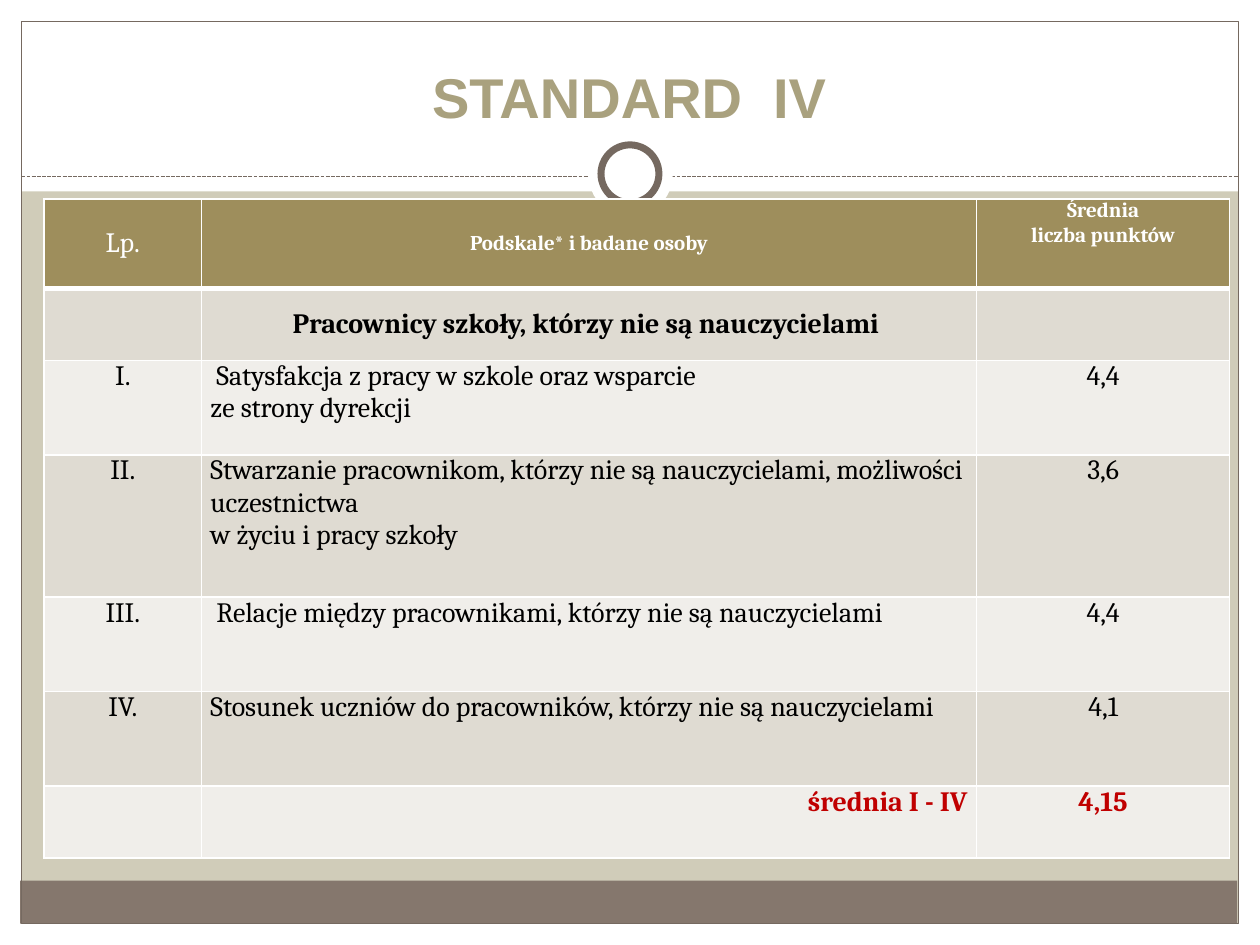
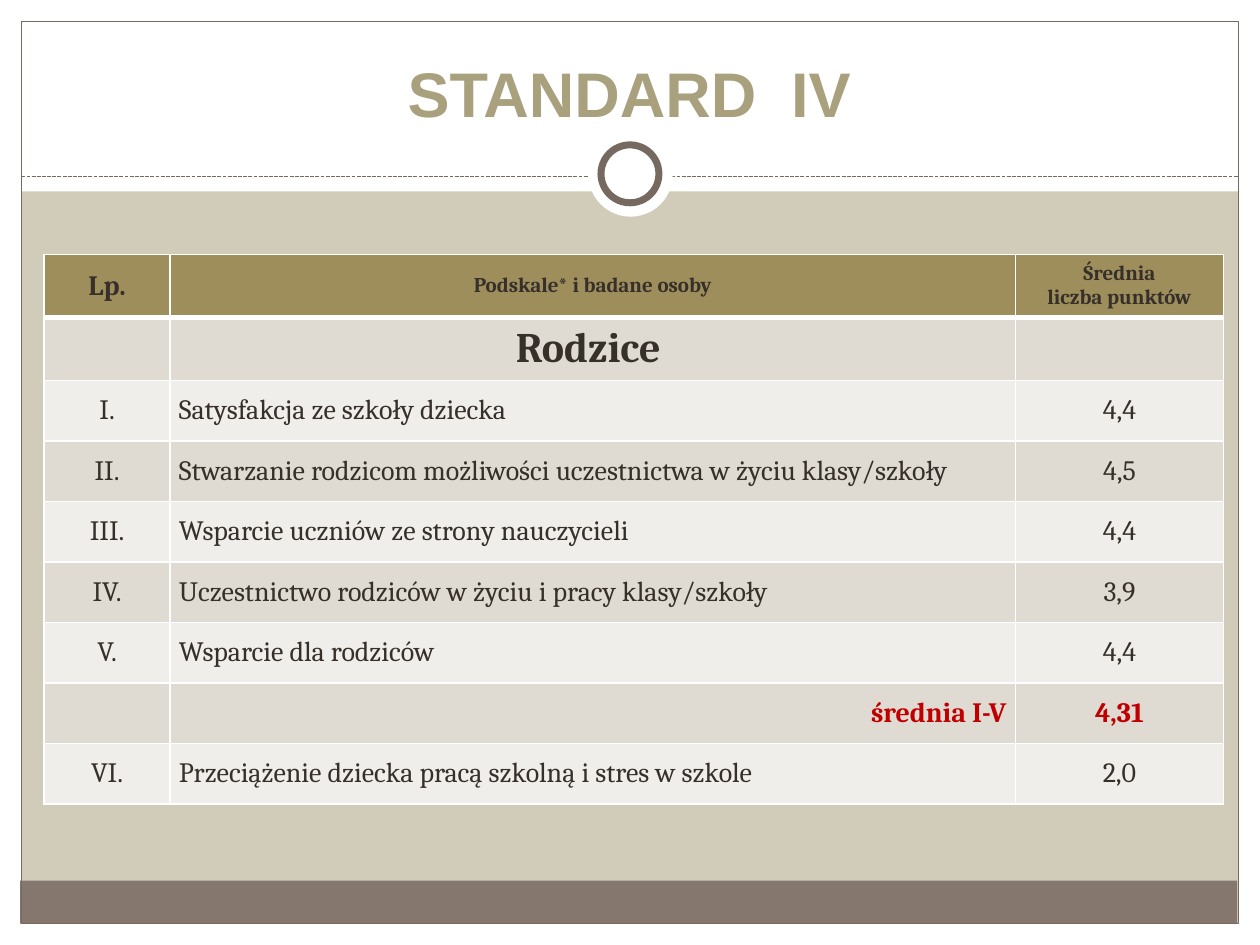
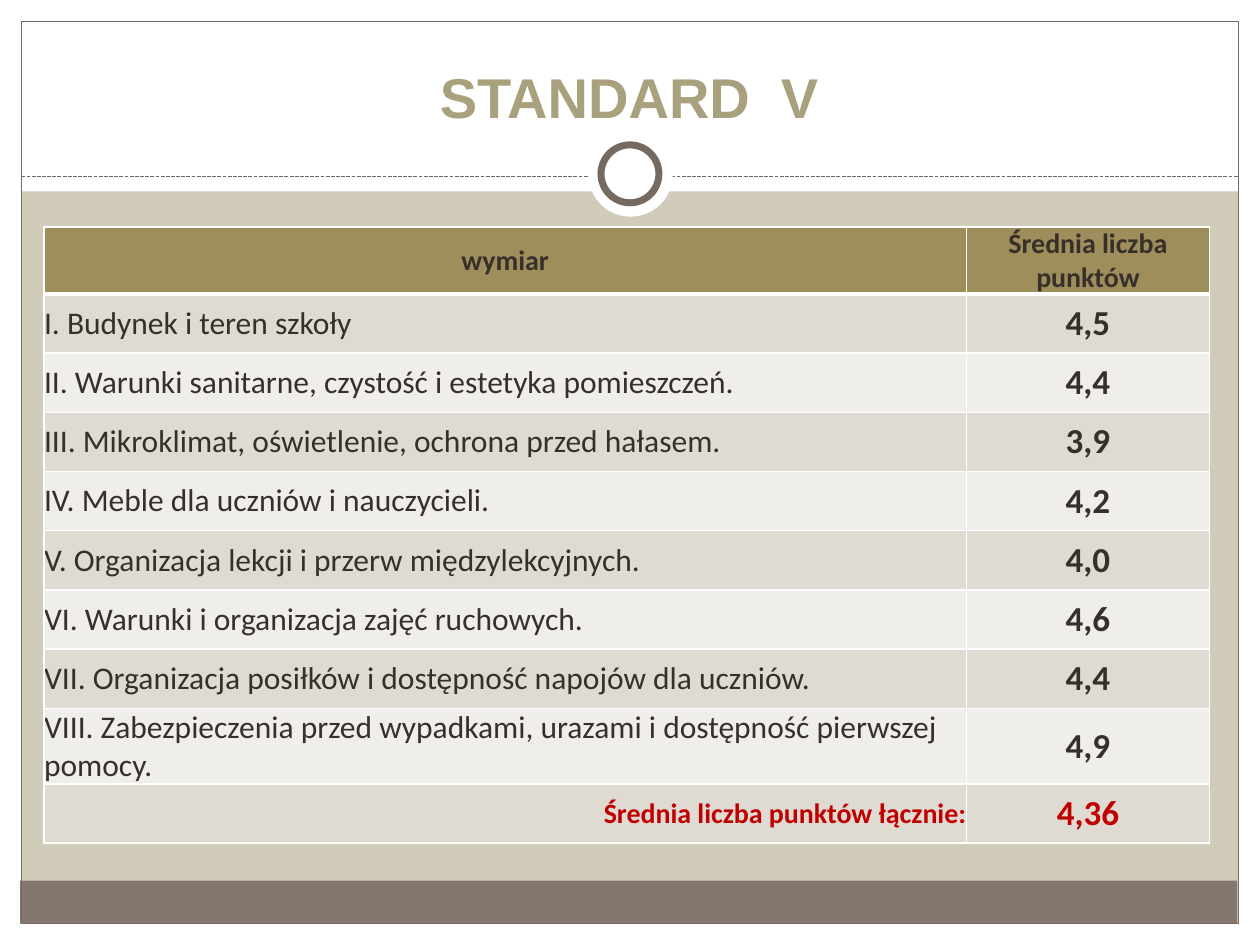
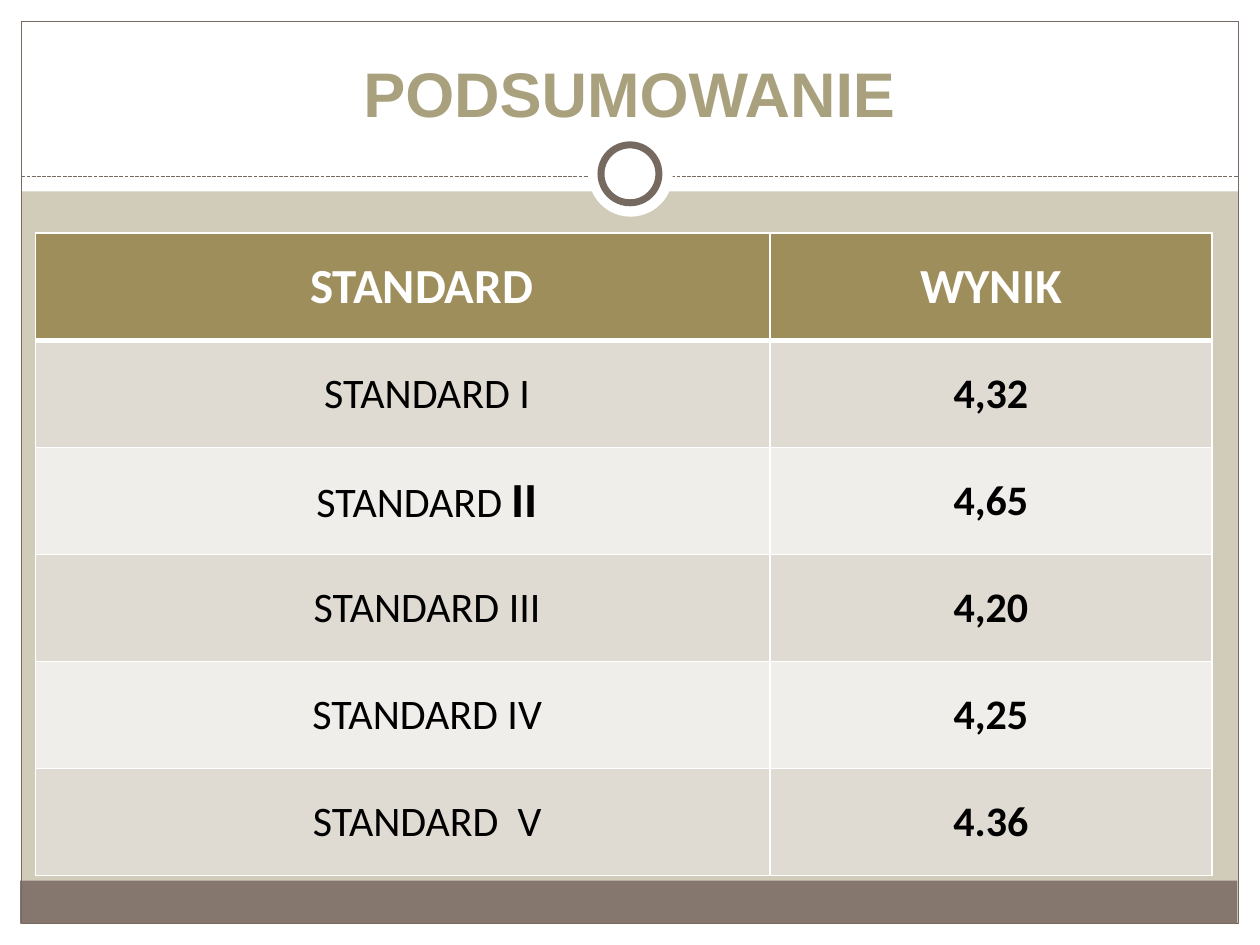
import dataclasses
import typing

import lxml.etree
import pptx
import pptx.dml.color
import pptx.enum.dml
import pptx.enum.shapes
import pptx.enum.text
import pptx.oxml.ns
import pptx.util

EMU_PER_PX = 9144  # 100 px to the inch

COLORS = {
    "background": "D0CCB9",
    "white": "FFFFFF",
    "black": "000000",
    "footer": "85776D",
    "frame": "756960",
    "title": "A9A17E",
    "title outline": "3B3026",
    "header": "9E8E5C",
    "dark band": "DFDBD2",
    "light band": "F0EEEA",
    "text": "37302A",
    "red": "C00000",
}

ALIGN = pptx.enum.text.PP_ALIGN
ANCHOR = pptx.enum.text.MSO_ANCHOR
SHAPE = pptx.enum.shapes.MSO_SHAPE


@dataclasses.dataclass(frozen=True)
class Decoration:
    left: int
    top: int
    width: int
    height: int
    fill: str = ""
    line: str = ""
    line_width: float = 0
    preset: SHAPE = SHAPE.RECTANGLE


@dataclasses.dataclass(frozen=True)
class CellStyle:
    size: int
    color: str = "text"
    bold: bool = False
    align: ALIGN = ALIGN.CENTER
    anchor: ANCHOR = ANCHOR.MIDDLE
    indent: int = 0


@dataclasses.dataclass(frozen=True)
class Cell:
    """Cell text: \\n starts a paragraph, \\v breaks a line."""
    text: str
    style: CellStyle
    large_ending: str = ""


EMPTY = Cell("", CellStyle(16))


@dataclasses.dataclass(frozen=True)
class ScoreTable:
    left: int
    top: int
    columns: list[int]
    row_heights: list[int]
    font: str
    margins: tuple[int, int]  # horizontal, vertical
    rows: list[list[Cell]]


@dataclasses.dataclass(frozen=True)
class ScoreSlide:
    title: str
    title_size: int
    table: ScoreTable


FRAME = [
    Decoration(0, 733, 1000, 17, "white"),
    Decoration(0, 0, 1000, 152, "white"),
    Decoration(0, 0, 17, 750, "white"),
    Decoration(983, 0, 17, 750, "white"),
    Decoration(16, 699, 966, 34, "footer"),
    Decoration(17, 17, 966, 716, line="frame", line_width=0.75),
]
RING = [
    Decoration(467, 105, 67, 67, "white", preset=SHAPE.OVAL),
    Decoration(477, 115, 46, 46, "white", "frame", 4, SHAPE.OVAL),
]


def px(length: int) -> pptx.util.Emu:
    return pptx.util.Emu(length * EMU_PER_PX)


def rgb(name: str) -> pptx.dml.color.RGBColor:
    return pptx.dml.color.RGBColor.from_string(COLORS[name])


def line_element(tag: str, color: str, points: int) -> lxml.etree._Element:
    """Make a solid DrawingML line for a border or a text outline."""
    qn = pptx.oxml.ns.qn
    line = lxml.etree.Element(qn(tag), w=str(pptx.util.Pt(points)))
    fill = lxml.etree.SubElement(line, qn("a:solidFill"))
    lxml.etree.SubElement(fill, qn("a:srgbClr"), val=COLORS[color])
    return line


def set_font(font: typing.Any, name: str, size: int, color: str, bold: bool) -> None:
    font.name = name
    font.size = pptx.util.Pt(size)
    font.bold = bold
    font.color.rgb = rgb(color)


def draw_decoration(slide: typing.Any, item: Decoration) -> None:
    shape = slide.shapes.add_shape(
        item.preset, px(item.left), px(item.top), px(item.width), px(item.height))
    shape.shadow.inherit = False
    if item.fill:
        shape.fill.solid()
        shape.fill.fore_color.rgb = rgb(item.fill)
    else:
        shape.fill.background()
    if item.line:
        shape.line.color.rgb = rgb(item.line)
        shape.line.width = pptx.util.Pt(item.line_width)
    else:
        shape.line.fill.background()


def draw_divider(slide: typing.Any) -> None:
    divider = slide.shapes.add_connector(
        pptx.enum.shapes.MSO_CONNECTOR.STRAIGHT, px(17), px(140), px(983), px(140))
    divider.line.color.rgb = rgb("frame")
    divider.line.width = pptx.util.Pt(0.75)
    divider.line.dash_style = pptx.enum.dml.MSO_LINE.SQUARE_DOT
    lxml.etree.SubElement(divider._element.spPr, pptx.oxml.ns.qn("a:effectLst"))


def draw_title(slide: typing.Any, text: str, size: int) -> None:
    frame = slide.shapes.add_textbox(px(33), px(25), px(933), px(83)).text_frame
    frame.word_wrap = True
    frame.vertical_anchor = ANCHOR.BOTTOM
    paragraph = frame.paragraphs[0]
    paragraph.text = text
    paragraph.alignment = ALIGN.CENTER
    set_font(paragraph.font, "Arial", size, "title", True)
    paragraph.font._element.insert(0, line_element("a:ln", "title outline", 1))


def fill_cell(target: typing.Any, cell: Cell, font: str) -> None:
    style = cell.style
    target.vertical_anchor = style.anchor
    target.text_frame.text = cell.text
    for paragraph in target.text_frame.paragraphs:
        paragraph.alignment = style.align
        set_font(paragraph.font, font, style.size, style.color, style.bold)
        if style.indent:
            paragraph._p.get_or_add_pPr().set("marL", str(px(style.indent)))
    if cell.large_ending:
        run = target.text_frame.paragraphs[-1].add_run()
        run.text = cell.large_ending
        run.font.size = pptx.util.Pt(style.size + 4)
        run.font.bold = True


def draw_table(slide: typing.Any, content: ScoreTable) -> None:
    table = slide.shapes.add_table(
        len(content.rows), len(content.columns), px(content.left), px(content.top),
        px(sum(content.columns)), px(sum(content.row_heights))).table
    table.horz_banding = False
    for column, width in zip(table.columns, content.columns):
        column.width = px(width)
    for row, height in zip(table.rows, content.row_heights):
        row.height = px(height)

    horizontal, vertical = map(px, content.margins)
    for row_index, cells in enumerate(content.rows):
        is_header = row_index == 0
        band = "header" if is_header else "dark band" if row_index % 2 else "light band"
        for column_index, cell in enumerate(cells):
            target = table.cell(row_index, column_index)
            target.margin_left = target.margin_right = horizontal
            target.margin_top = target.margin_bottom = vertical
            # The header has a thick lower edge, shared with the row below
            borders = {"a:lnL": 1, "a:lnR": 1,
                       "a:lnT": 3 if row_index == 1 else 1,
                       "a:lnB": 3 if is_header else 1}
            for tag, points in borders.items():
                target._tc.get_or_add_tcPr().append(line_element(tag, "white", points))
            target.fill.solid()
            target.fill.fore_color.rgb = rgb(band)
            fill_cell(target, cell, content.font)


def row_builder(*styles: CellStyle) -> typing.Callable[..., list[Cell]]:
    """Return a function that pairs the texts of a row with column styles."""
    def build(*texts: str) -> list[Cell]:
        return [Cell(text, style) for text, style in zip(texts, styles)]
    return build


def staff_table() -> ScoreTable:
    number = CellStyle(16, "black", anchor=ANCHOR.TOP)
    name = dataclasses.replace(number, align=ALIGN.LEFT)
    total = dataclasses.replace(number, color="red", bold=True)
    heading = CellStyle(12, "white", True)
    item = row_builder(number, name, number)
    return ScoreTable(
        35, 158, [125, 615, 201], [71, 57, 75, 113, 75, 75, 57], "Cambria", (7, 0), [
            [Cell("Lp.", CellStyle(16, "white")),
             Cell("Podskale* i badane osoby", heading),
             Cell("Średnia\nliczba punktów",
                  dataclasses.replace(heading, anchor=ANCHOR.TOP))],
            [EMPTY, Cell("Pracownicy szkoły, którzy nie są nauczycielami ",
                         CellStyle(16, "black", True)), EMPTY],
            item("I.", " Satysfakcja z pracy w szkole oraz wsparcie \vze strony dyrekcji",
                 "4,4"),
            item("II.", "Stwarzanie pracownikom, którzy nie są nauczycielami, możliwości "
                 "uczestnictwa \vw życiu i pracy szkoły", "3,6"),
            item("III.", " Relacje między pracownikami, którzy nie są nauczycielami",
                 "4,4"),
            item("IV.", "Stosunek uczniów do pracowników, którzy nie są nauczycielami",
                 "4,1"),
            [EMPTY, Cell("średnia I - IV", dataclasses.replace(total, align=ALIGN.RIGHT)),
             Cell("4,15", total)],
        ])


def parent_table() -> ScoreTable:
    number = CellStyle(16)
    total = CellStyle(16, "red", True)
    heading = CellStyle(12, bold=True)
    item = row_builder(number, CellStyle(16, align=ALIGN.LEFT), number)
    return ScoreTable(
        35, 202, [100, 671, 165], [50] * 2 + [48] * 7, "Cambria", (7, 0), [
            [Cell("Lp.", CellStyle(16, bold=True)),
             Cell("Podskale* i badane osoby", heading),
             Cell("Średnia\nliczba punktów", heading)],
            [EMPTY, Cell("Rodzice ", CellStyle(24, bold=True)), EMPTY],
            item("I.", "Satysfakcja ze szkoły dziecka", "4,4"),
            item("II.", "Stwarzanie rodzicom możliwości uczestnictwa w życiu klasy/szkoły",
                 "4,5"),
            item("III.", "Wsparcie uczniów ze strony nauczycieli", "4,4"),
            item("IV.", "Uczestnictwo rodziców w życiu i pracy klasy/szkoły", "3,9"),
            item("V.", "Wsparcie dla rodziców", "4,4"),
            [EMPTY, Cell("średnia I-V", dataclasses.replace(total, align=ALIGN.RIGHT)),
             Cell("4,31", total)],
            item("VI.", "Przeciążenie dziecka pracą szkolną i stres w szkole", "2,0"),
        ])


def building_table() -> ScoreTable:
    heading = CellStyle(16, bold=True)
    item = row_builder(CellStyle(18, align=ALIGN.LEFT), CellStyle(20, bold=True))
    total = row_builder(CellStyle(16, "red", True, ALIGN.RIGHT), CellStyle(20, "red", True))
    return ScoreTable(
        35, 180, [732, 193], [49] + [47] * 7 + [55, 47], "Calibri", (0, 0), [
            row_builder(heading, heading)("wymiar", "Średnia liczba punktów"),
            item("I. Budynek i teren szkoły", "4,5"),
            item("II. Warunki sanitarne, czystość i estetyka pomieszczeń.", "4,4"),
            item("III. Mikroklimat, oświetlenie, ochrona przed hałasem.", "3,9"),
            item("IV. Meble dla uczniów i nauczycieli.", "4,2"),
            item("V. Organizacja lekcji i przerw międzylekcyjnych.", "4,0"),
            item("VI. Warunki i organizacja zajęć ruchowych.", "4,6"),
            item("VII. Organizacja posiłków i dostępność napojów dla uczniów.", "4,4"),
            item("VIII. Zabezpieczenia przed wypadkami, urazami i dostępność pierwszej "
                 "pomocy.", "4,9"),
            total("Średnia liczba punktów łącznie:", "4,36"),
        ])


def summary_table() -> ScoreTable:
    heading = CellStyle(28, "white", True)
    standard = CellStyle(24, "black", indent=39)
    score = CellStyle(24, "black", True)
    item = row_builder(standard, score)
    return ScoreTable(
        28, 185, [583, 351], [85] * 6, "Calibri", (10, 5), [
            [Cell("STANDARD ", dataclasses.replace(heading, indent=39)),
             Cell("WYNIK", heading)],
            item("STANDARD I", "4,32"),
            [Cell("STANDARD ", standard, large_ending="II"), Cell("4,65", score)],
            item("STANDARD III", "4,20"),
            item("STANDARD IV", "4,25"),
            item("STANDARD  V", "4.36"),
        ])


def add_score_slide(presentation: typing.Any, content: ScoreSlide) -> None:
    slide = presentation.slides.add_slide(presentation.slide_layouts[6])
    slide.background.fill.solid()
    slide.background.fill.fore_color.rgb = rgb("background")
    for item in FRAME:
        draw_decoration(slide, item)
    draw_divider(slide)
    for item in RING:
        draw_decoration(slide, item)
    draw_title(slide, content.title, content.title_size)
    draw_table(slide, content.table)


def main() -> None:
    presentation = pptx.Presentation()
    presentation.slide_width = px(1000)
    presentation.slide_height = px(750)
    for content in (
        ScoreSlide("STANDARD  IV", 32, staff_table()),
        ScoreSlide("STANDARD  IV", 36, parent_table()),
        ScoreSlide("STANDARD  V", 32, building_table()),
        ScoreSlide("PODSUMOWANIE", 36, summary_table()),
    ):
        add_score_slide(presentation, content)
    presentation.save("out.pptx")


if __name__ == "__main__":
    main()
